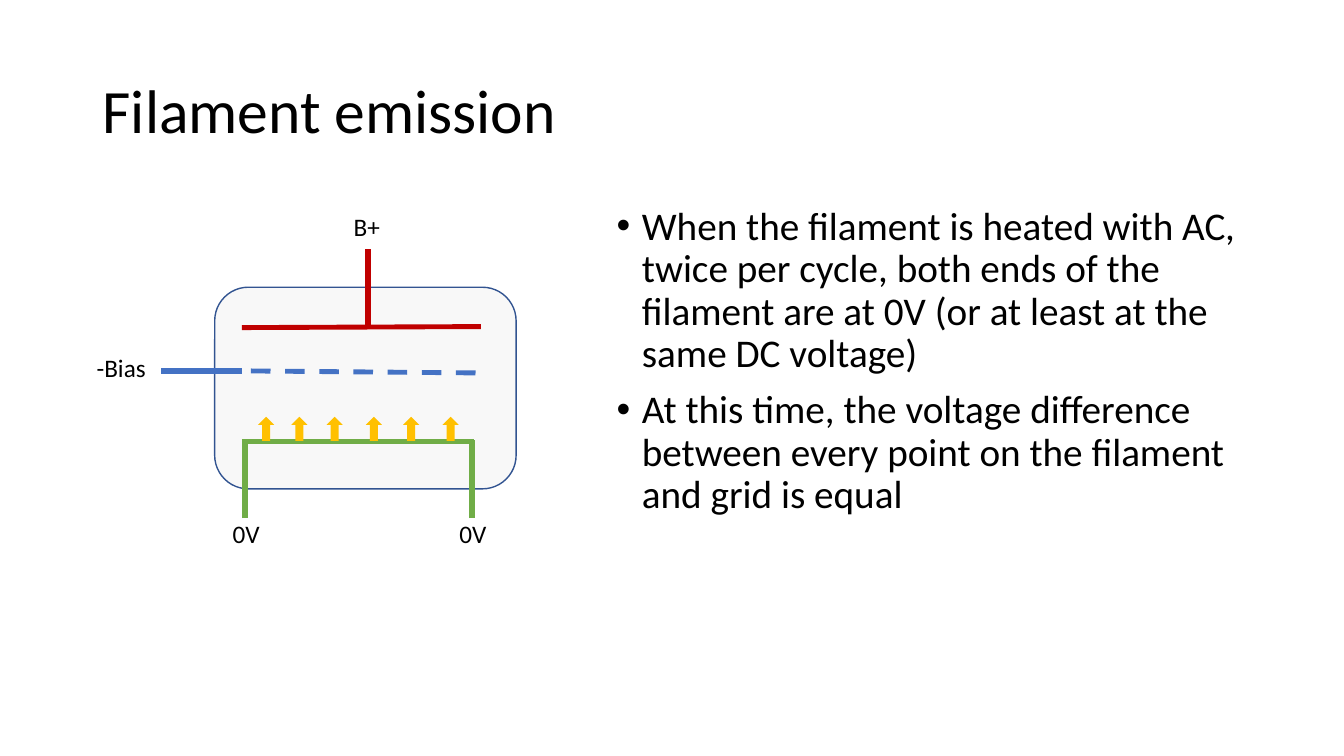
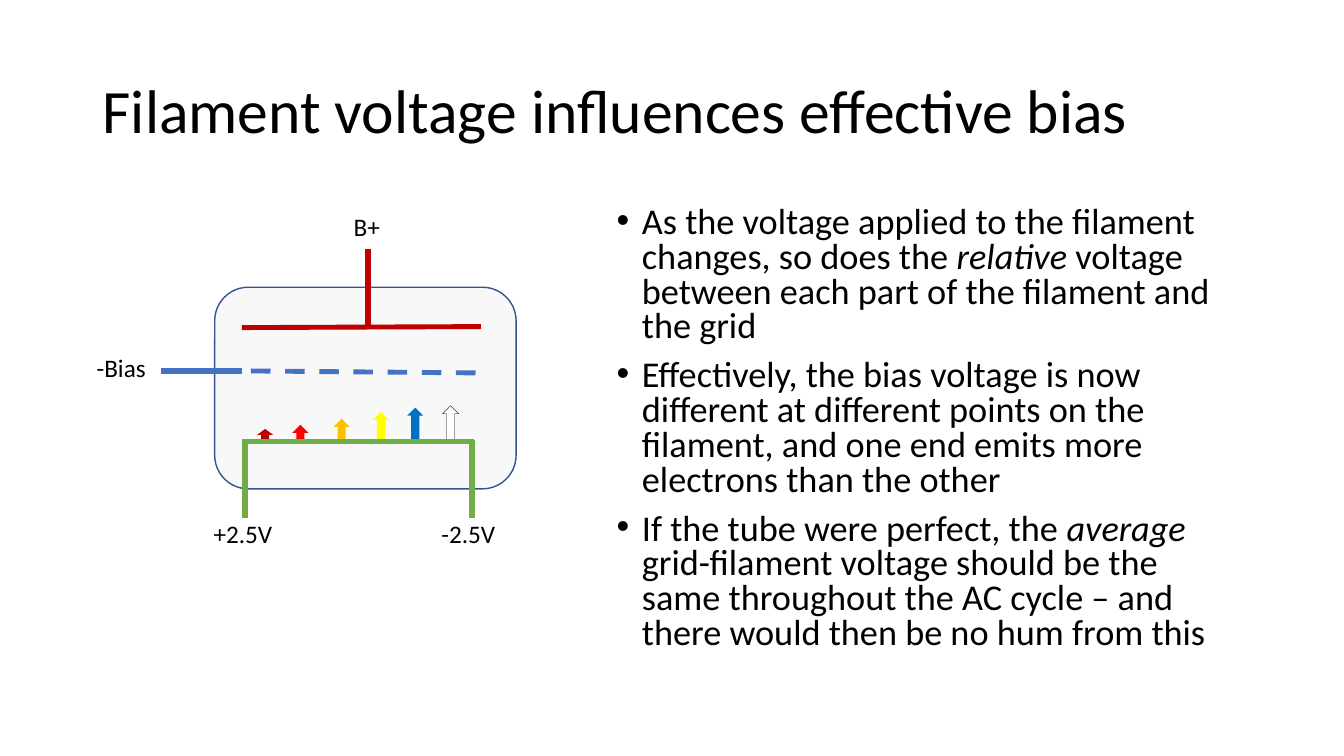
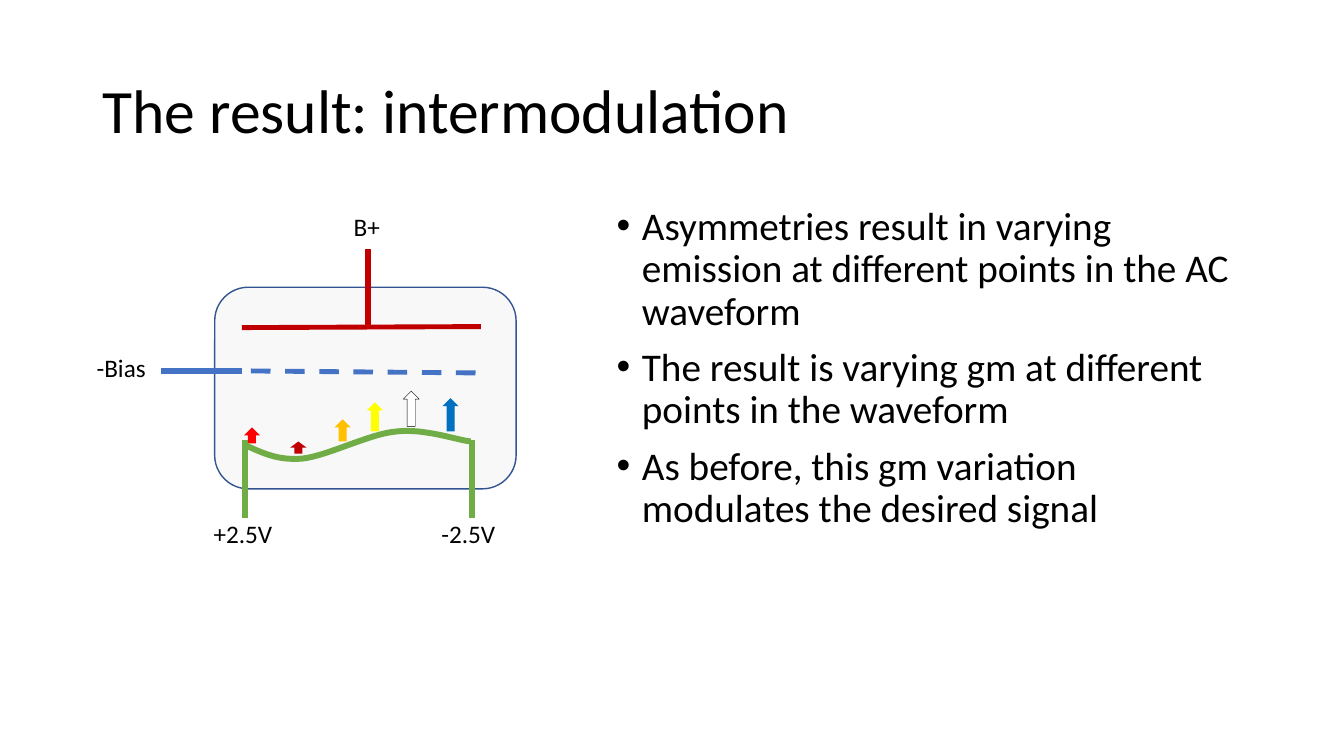
import dataclasses

import pptx
import pptx.dml.color
import pptx.enum.dml
import pptx.enum.shapes
import pptx.enum.text
import pptx.oxml.ns
import pptx.util
from lxml import etree

CELL = pptx.util.Inches(0.1)
COLS, ROWS = 133.33, 75


@dataclasses.dataclass(frozen=True)
class Theme:
    font: str = "Calibri"
    title: float = 44
    body: float = 28
    body_small: float = 25.9
    label: float = 18
    text: str = "000000"
    glass: str = "F8F8F8"
    outline: str = "325491"
    plate: str = "C00000"
    grid: str = "4472C4"
    filament: str = "70AD47"
    coldest: str = "C00000"
    cold: str = "FF0000"
    medium: str = "FFC000"
    warm: str = "FFFF00"
    hot: str = "0070C0"
    hottest: str = "FFFFFF"


THEME = Theme()
FILAMENT_ROW = 43.8
ARROW_BASE = 43.75
ARROW_WIDTH = 1.6

EVEN_ARROWS = [(left, ARROW_BASE, 2.4, THEME.medium)
               for left in (25.6, 28.9, 32.4, 36.3, 40, 43.9)]
BIASED_ARROWS = [
    (25.5, ARROW_BASE, 1.2, THEME.coldest),
    (29, ARROW_BASE, 1.6, THEME.cold),
    (33.1, ARROW_BASE, 2.2, THEME.medium),
    (37, ARROW_BASE, 2.9, THEME.warm),
    (40.4, ARROW_BASE, 3.3, THEME.hot),
    (43.9, ARROW_BASE, 3.5, THEME.hottest),
]
UNEVEN_ARROWS = [
    (24.2, 44, 1.6, THEME.cold),
    (28.8, 45, 1.2, THEME.coldest),
    (33.2, 43.8, 2.2, THEME.medium),
    (36.4, 42.8, 2.9, THEME.warm),
    (40, 42.3, 3.5, THEME.hottest),
    (43.9, 42.8, 3.3, THEME.hot),
]
WAVE_START = (24.4, 44.2)
WAVE_CURVES = [
    ((26, 44.9), (27.5, 45.7), (30, 45.5)),
    ((32.6, 45.2), (36.7, 43), (39.4, 42.8)),
    ((42.2, 42.5), (45.5, 43.7), (46.7, 43.8)),
]


def cells(*counts):
    return [round(n * CELL) for n in counts]


def rgb(value):
    return pptx.dml.color.RGBColor.from_string(value)


def add_text(s, at, paragraphs, size, anchor="TOP", spacing=1.0, bullets=False):
    tf = s.shapes.add_textbox(*cells(*at)).text_frame
    tf.word_wrap = True
    tf.vertical_anchor = pptx.enum.text.MSO_ANCHOR[anchor]
    for i, text in enumerate(paragraphs):
        p = tf.add_paragraph() if i else tf.paragraphs[0]
        p.line_spacing = spacing
        if i:
            p.space_before = pptx.util.Pt(10)
        if bullets:
            add_bullet(p)
        for j, part in enumerate(text.split("*")):
            r = p.add_run()
            r.text = part
            r.font.name = THEME.font
            r.font.size = pptx.util.Pt(size)
            r.font.color.rgb = rgb(THEME.text)
            r.font.italic = j % 2 == 1


def add_bullet(p):
    pPr = p._p.get_or_add_pPr()
    indent = pptx.util.Inches(0.25)
    pPr.set("marL", str(indent))
    pPr.set("indent", str(-indent))
    bu_font = etree.SubElement(pPr, pptx.oxml.ns.qn("a:buFont"))
    bu_font.set("typeface", "Arial")
    bu_char = etree.SubElement(pPr, pptx.oxml.ns.qn("a:buChar"))
    bu_char.set("char", "•")


def add_shape(s, kind, at, fill, line=None, width=0):
    sp = s.shapes.add_shape(pptx.enum.shapes.MSO_SHAPE[kind], *cells(*at))
    sp.shadow.inherit = False
    sp.fill.solid()
    sp.fill.fore_color.rgb = rgb(fill)
    if line:
        sp.line.color.rgb = rgb(line)
        sp.line.width = pptx.util.Pt(width)
    else:
        sp.line.fill.background()


def add_wire(s, start, end, color, width, dashed=False):
    straight = pptx.enum.shapes.MSO_CONNECTOR.STRAIGHT
    wire = s.shapes.add_connector(straight, *cells(*start, *end))
    wire.line.color.rgb = rgb(color)
    wire.line.width = pptx.util.Pt(width)
    if dashed:
        wire.line.dash_style = pptx.enum.dml.MSO_LINE.DASH
    etree.SubElement(wire._element.spPr, pptx.oxml.ns.qn("a:effectLst"))


def add_arrows(s, arrows):
    for left, base, height, fill in arrows:
        line = THEME.text if fill == THEME.hottest else None
        at = (left, base - height, ARROW_WIDTH, height)
        add_shape(s, "UP_ARROW", at, fill, line, 0.25)


def add_flat_filament(s):
    add_wire(s, (24, FILAMENT_ROW), (47, FILAMENT_ROW), THEME.filament, 3.5)


def bezier(points, t):
    weights = ((1 - t) ** 3, 3 * t * (1 - t) ** 2, 3 * t ** 2 * (1 - t), t ** 3)
    return [sum(w * pt[axis] for w, pt in zip(weights, points)) for axis in (0, 1)]


def add_wavy_filament(s, steps=16):
    points, start = [], WAVE_START
    for curve in WAVE_CURVES:
        points += [cells(*bezier((start, *curve), n / steps))
                   for n in range(1, steps + 1)]
        start = curve[-1]
    builder = s.shapes.build_freeform(*cells(*WAVE_START))
    builder.add_line_segments(points, close=False)
    sp = builder.convert_to_shape()
    sp.shadow.inherit = False
    sp.fill.background()
    sp.line.color.rgb = rgb(THEME.filament)
    sp.line.width = pptx.util.Pt(4.25)


def add_tube(s, labels):
    add_shape(s, "ROUNDED_RECTANGLE", (21.3, 28.5, 29.9, 20),
              THEME.glass, THEME.outline, 1)
    add_wire(s, (24, 32.5), (47.7, 32.4), THEME.plate, 3.5)
    add_wire(s, (24.9, 36.8), (47.7, 37), THEME.grid, 3.5, dashed=True)
    add_wire(s, (36.5, 32.4), (36.5, 24.7), THEME.plate, 4)
    for leg in (24.3, 46.8):
        add_wire(s, (leg, 51.4), (leg, 43.7), THEME.filament, 4)
    add_wire(s, (24, 36.8), (16, 36.8), THEME.grid, 3.75)
    pins = [("B+", 34.1, 20.5, 7), ("-Bias", 8.6, 34.5, 7.2)]
    for text, left, top, width in pins + labels:
        add_text(s, (left, top, width, 4), [text], THEME.label)


def add_slide(prs, title, points, labels, size=THEME.body, spacing=0.9):
    s = prs.slides.add_slide(prs.slide_layouts[6])
    add_text(s, (9.2, 4, 115, 14.5), [title], THEME.title, "MIDDLE", 0.9)
    add_text(s, (60.2, 20, 64, 47.6), points, size, spacing=spacing, bullets=True)
    add_tube(s, labels)
    return s


def main():
    prs = pptx.Presentation()
    prs.slide_width, prs.slide_height = cells(COLS, ROWS)
    zero_volts = [("0V", 22.1, 50.9, 7), ("0V", 44.6, 50.9, 7)]
    peak_volts = [("+2.5V", 20.2, 50.9, 9), ("-2.5V", 42.8, 50.9, 8.3)]

    s = add_slide(prs, "Filament emission", [
        "When the filament is heated with AC, twice per cycle, both ends of the "
        "filament are at 0V (or at least at the same DC voltage)",
        "At this time, the voltage difference between every point on the filament "
        "and grid is equal",
    ], zero_volts)
    add_flat_filament(s)
    add_arrows(s, EVEN_ARROWS)

    s = add_slide(prs, "Filament voltage influences effective bias", [
        "As the voltage applied to the filament changes, so does the *relative* "
        "voltage between each part of the filament and the grid",
        "Effectively, the bias voltage is now different at different points on the "
        "filament, and one end emits more electrons than the other",
        "If the tube were perfect, the *average *grid-filament voltage should be the "
        "same throughout the AC cycle – and there would then be no hum from this",
    ], peak_volts, THEME.body_small, 0.8)
    add_arrows(s, BIASED_ARROWS)
    add_flat_filament(s)

    s = add_slide(prs, "The result: intermodulation", [
        "Asymmetries result in varying emission at different points in the AC waveform",
        "The result is varying gm at different points in the waveform",
        "As before, this gm variation modulates the desired signal",
    ], peak_volts)
    add_arrows(s, UNEVEN_ARROWS)
    add_wavy_filament(s)

    prs.save("out.pptx")


if __name__ == "__main__":
    main()
